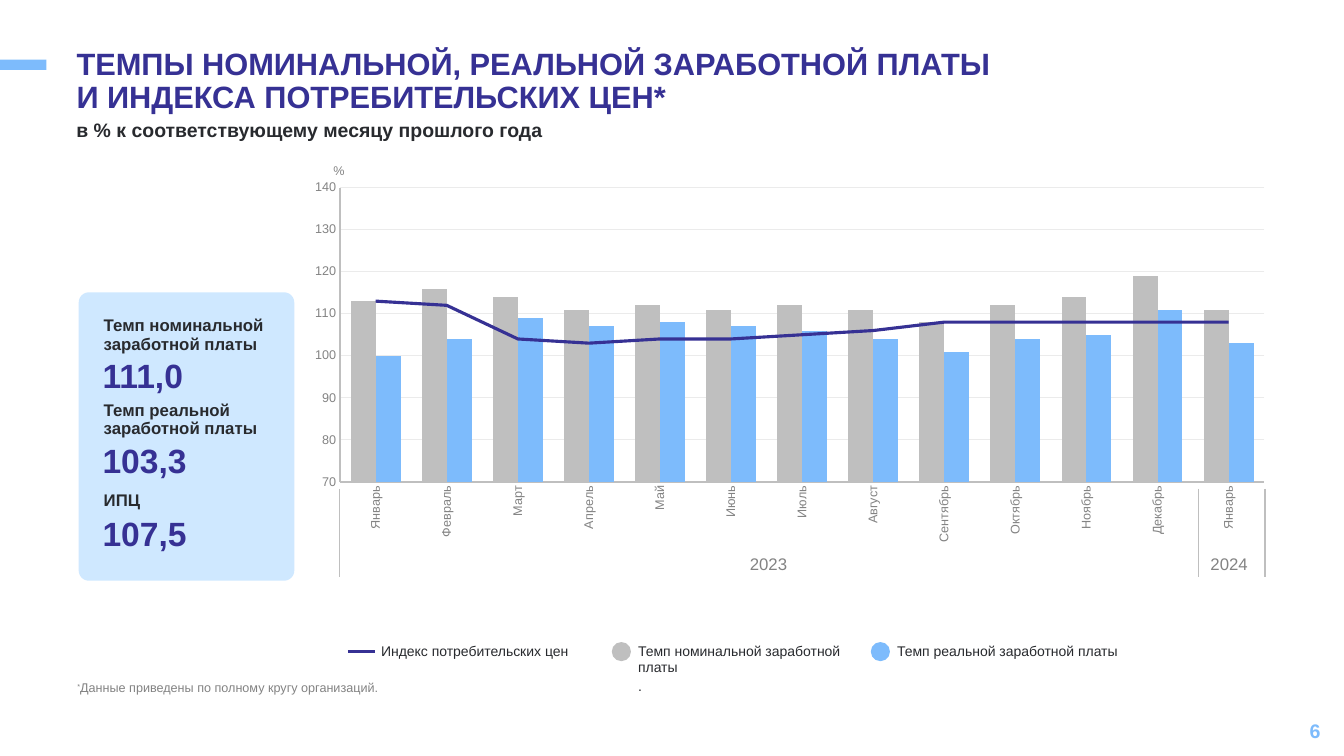
from dataclasses import dataclass

from pptx import Presentation
from pptx.chart.data import CategoryChartData
from pptx.dml.color import RGBColor
from pptx.enum.chart import XL_CHART_TYPE as ChartType
from pptx.enum.chart import XL_MARKER_STYLE as Marker
from pptx.enum.chart import XL_TICK_MARK as Tick
from pptx.enum.shapes import MSO_CONNECTOR, MSO_SHAPE as Shape
from pptx.enum.text import MSO_ANCHOR as Anchor, PP_ALIGN as Align
from pptx.oxml import parse_xml
from pptx.oxml.ns import nsdecls, qn
from pptx.util import Pt

INDIGO = RGBColor(0x36, 0x31, 0x94)
BLUE = RGBColor(0x7D, 0xBB, 0xFC)
PALE_BLUE = RGBColor(0xCF, 0xE8, 0xFF)
DARK = RGBColor(0x28, 0x2A, 0x2E)
GRAY = RGBColor(0x83, 0x83, 0x83)
SILVER = RGBColor(0xBF, 0xBF, 0xBF)
GRID = RGBColor(0xEB, 0xEB, 0xEB)
FONT = "Arial"

MONTHS = ["Январь", "Февраль", "Март", "Апрель", "Май", "Июнь", "Июль",
          "Август", "Сентябрь", "Октябрь", "Ноябрь", "Декабрь", "Январь"]
NOMINAL = [113, 116, 114, 111, 112, 111, 112, 111, 108, 112, 114, 119, 111]
REAL = [100, 104, 109, 107, 108, 107, 106, 104, 101, 104, 105, 111, 103]
PRICES = [113, 112, 104, 103, 104, 104, 105, 106, 108, 108, 108, 108, 108]


@dataclass
class Label:
    text: str
    x: float
    y: float
    w: float
    h: float
    size: float
    color: RGBColor = DARK
    bold: bool = False
    align: Align = Align.LEFT
    anchor: Anchor = Anchor.TOP
    spacing: float = 1.0
    before: float = 0
    margins: tuple = (7.2, 3.6, 7.2, 3.6)
    wrap: bool = True


@dataclass
class Indicator:
    name: str
    value: str
    name_y: float
    value_y: float


@dataclass
class LegendItem:
    text: str
    x: float
    w: float
    h: float
    dot_x: float | None = None
    color: RGBColor = SILVER


INDICATORS = [
    Indicator("Темп номинальной\nзаработной платы", "111,0", 223.2, 249.8),
    Indicator("Темп реальной\nзаработной платы", "103,3", 283.7, 311),
    Indicator("ИПЦ", "107,5", 347.8, 362.9),
]
LEGEND = [
    LegendItem("Индекс потребительских цен", 272.2, 157.7, 13),
    LegendItem("Темп номинальной заработной платы\n.", 455.8, 166.3, 38.2, 437, SILVER),
    LegendItem("Темп реальной заработной платы", 640.8, 157.7, 25.2, 622, BLUE),
]
TIGHT = (0, 0.7, 0, 0)


def style_text(tf, d: Label) -> None:
    tf.text = d.text
    tf.word_wrap = d.wrap
    tf.vertical_anchor = d.anchor
    tf.margin_left, tf.margin_top, tf.margin_right, tf.margin_bottom = map(Pt, d.margins)
    for i, p in enumerate(tf.paragraphs):
        p.alignment = d.align
        p.line_spacing = d.spacing
        p.space_before = Pt(d.before if i else 0)
        f = p.font
        f.name, f.size, f.bold = FONT, Pt(d.size), d.bold
        f.color.rgb = d.color


def add_label(s, d: Label):
    box = s.shapes.add_textbox(Pt(d.x), Pt(d.y), Pt(d.w), Pt(d.h))
    style_text(box.text_frame, d)
    return box.text_frame


def add_block(s, kind: Shape, x: float, y: float, w: float, h: float, color: RGBColor):
    sp = s.shapes.add_shape(kind, Pt(x), Pt(y), Pt(w), Pt(h))
    sp.shadow.inherit = False
    sp.fill.solid()
    sp.fill.fore_color.rgb = color
    sp.line.fill.background()
    return sp


def add_line(s, x1: float, y1: float, x2: float, y2: float, color: RGBColor, width: float) -> None:
    cxn = s.shapes.add_connector(MSO_CONNECTOR.STRAIGHT, Pt(x1), Pt(y1), Pt(x2), Pt(y2))
    cxn.line.color.rgb = color
    cxn.line.width = Pt(width)
    cxn._element.spPr.append(parse_xml(f"<a:effectLst {nsdecls('a')}/>"))


def move_last_series_to_line(chart) -> None:
    """Turn the last column series into a line on the same axes."""
    bars = chart._chartSpace.find(".//" + qn("c:barChart"))
    ser = bars.findall(qn("c:ser"))[-1]
    for bar_only in ser.findall(qn("c:invertIfNegative")):
        ser.remove(bar_only)
    axes = "".join(f'<c:axId val="{a.get("val")}"/>' for a in bars.findall(qn("c:axId")))
    line = parse_xml(f'<c:lineChart {nsdecls("c")}><c:grouping val="standard"/>'
                     f'<c:varyColors val="0"/><c:marker val="1"/>{axes}</c:lineChart>')
    line.insert(2, ser)
    bars.addnext(line)


def set_plot_area(chart, x: float, y: float, w: float, h: float) -> None:
    area = chart._chartSpace.find(".//" + qn("c:plotArea"))
    for old in area.findall(qn("c:layout")):
        area.remove(old)
    sizes = "".join(f'<c:{k} val="{v}"/>' for k, v in zip("xywh", (x, y, w, h)))
    area.insert(0, parse_xml(
        f'<c:layout {nsdecls("c")}><c:manualLayout><c:layoutTarget val="inner"/>'
        f'<c:xMode val="edge"/><c:yMode val="edge"/>{sizes}</c:manualLayout></c:layout>'))


def add_wage_chart(s) -> None:
    data = CategoryChartData(number_format="0")
    data.categories = MONTHS
    data.add_series("Темп номинальной заработной платы", NOMINAL)
    data.add_series("Темп реальной заработной платы", REAL)
    data.add_series("Индекс потребительских цен", PRICES)
    chart = s.shapes.add_chart(ChartType.COLUMN_CLUSTERED, Pt(216), Pt(120.2),
                               Pt(691.2), Pt(272.2), data).chart
    chart.has_legend = chart.has_title = False
    chart.font.name, chart.font.size = FONT, Pt(10)
    chart.font.color.rgb = DARK
    move_last_series_to_line(chart)
    set_plot_area(chart, 0.039, 0.051, 0.955, 0.772)

    bars, line = chart.plots
    bars.gap_width, bars.overlap, bars.vary_by_categories = 85, 0, False
    for ser, color in zip(bars.series, (SILVER, BLUE)):
        ser.format.fill.solid()
        ser.format.fill.fore_color.rgb = color
    prices = line.series[0]
    prices.smooth = False
    prices.marker.style = Marker.NONE
    prices.format.line.color.rgb = INDIGO
    prices.format.line.width = Pt(2.25)

    cat, val = chart.category_axis, chart.value_axis
    for axis in (cat, val):
        axis.major_tick_mark = axis.minor_tick_mark = Tick.NONE
        axis.format.line.color.rgb = SILVER
        axis.format.line.width = Pt(1)
        f = axis.tick_labels.font
        f.name, f.size = FONT, Pt(9)
        f.color.rgb = GRAY
    cat._element.txPr.find(qn("a:bodyPr")).set("rot", "-5400000")
    val.minimum_scale, val.maximum_scale, val.major_unit = 70, 140, 10
    val.tick_labels.number_format = "0"
    val.tick_labels.number_format_is_linked = False
    val.major_gridlines.format.line.color.rgb = GRID
    val.major_gridlines.format.line.width = Pt(0.5)


def main() -> None:
    prs = Presentation()
    prs.slide_width, prs.slide_height = Pt(960), Pt(540)
    s = prs.slides.add_slide(prs.slide_layouts[5])

    add_block(s, Shape.RECTANGLE, 0, 42.7, 33.1, 7.2, BLUE)
    title = Label("ТЕМПЫ НОМИНАЛЬНОЙ, РЕАЛЬНОЙ ЗАРАБОТНОЙ ПЛАТЫ\vИ ИНДЕКСА ПОТРЕБИТЕЛЬСКИХ ЦЕН*",
                  47.5, 31, 749.5, 59.8, 22, INDIGO, True, spacing=0.9)
    sp = s.shapes.title
    sp.left, sp.top, sp.width, sp.height = Pt(title.x), Pt(title.y), Pt(title.w), Pt(title.h)
    style_text(sp.text_frame, title)
    add_label(s, Label("в % к соответствующему месяцу прошлого года", 47.5, 69.8, 782.6, 31.4,
                       13.9, bold=True, anchor=Anchor.BOTTOM, margins=(7.2, 0, 7.2, 0)))

    card = add_block(s, Shape.ROUNDED_RECTANGLE, 56.2, 208.8, 154, 206, PALE_BLUE)
    card.adjustments[0] = 0.047
    for ind in INDICATORS:
        add_label(s, Label(ind.name, 67, ind.name_y, 140, 36, 12, bold=True, spacing=0.9))
        add_label(s, Label(ind.value, 66.2, ind.value_y, 104.4, 36, 24, INDIGO, True))

    add_wage_chart(s)
    add_label(s, Label("%", 231.1, 113, 22.3, 18, 9, GRAY, wrap=False))
    for year, x in (("2023", 506.9), ("2024", 835.9)):
        add_label(s, Label(year, x, 394.6, 84.2, 15.8, 12, GRAY, align=Align.CENTER, margins=TIGHT))
    for x in (242.6, 856.1, 903.6):
        add_line(s, x, 349.2, x, 411.8, SILVER, 1)

    for item in LEGEND:
        add_label(s, Label(item.text, item.x, 457.9, item.w, item.h, 10, before=1, margins=TIGHT))
        if item.dot_x is None:
            add_line(s, 248.4, 465.1, 267.8, 465.1, INDIGO, 2)
        else:
            add_block(s, Shape.OVAL, item.dot_x, 458.6, 13.7, 13.7, item.color)

    note = add_label(s, Label("*", 48.2, 482.4, 277.9, 23.8, 9, GRAY))
    p = note.paragraphs[0]
    p.runs[0]._r.get_or_add_rPr().set("baseline", "30000")
    p.add_run().text = "Данные приведены по полному кругу организаций."
    add_label(s, Label("6", 734.4, 507.6, 216, 28.8, 14, BLUE, True, Align.RIGHT, Anchor.MIDDLE))
    prs.save("out.pptx")


if __name__ == "__main__":
    main()
